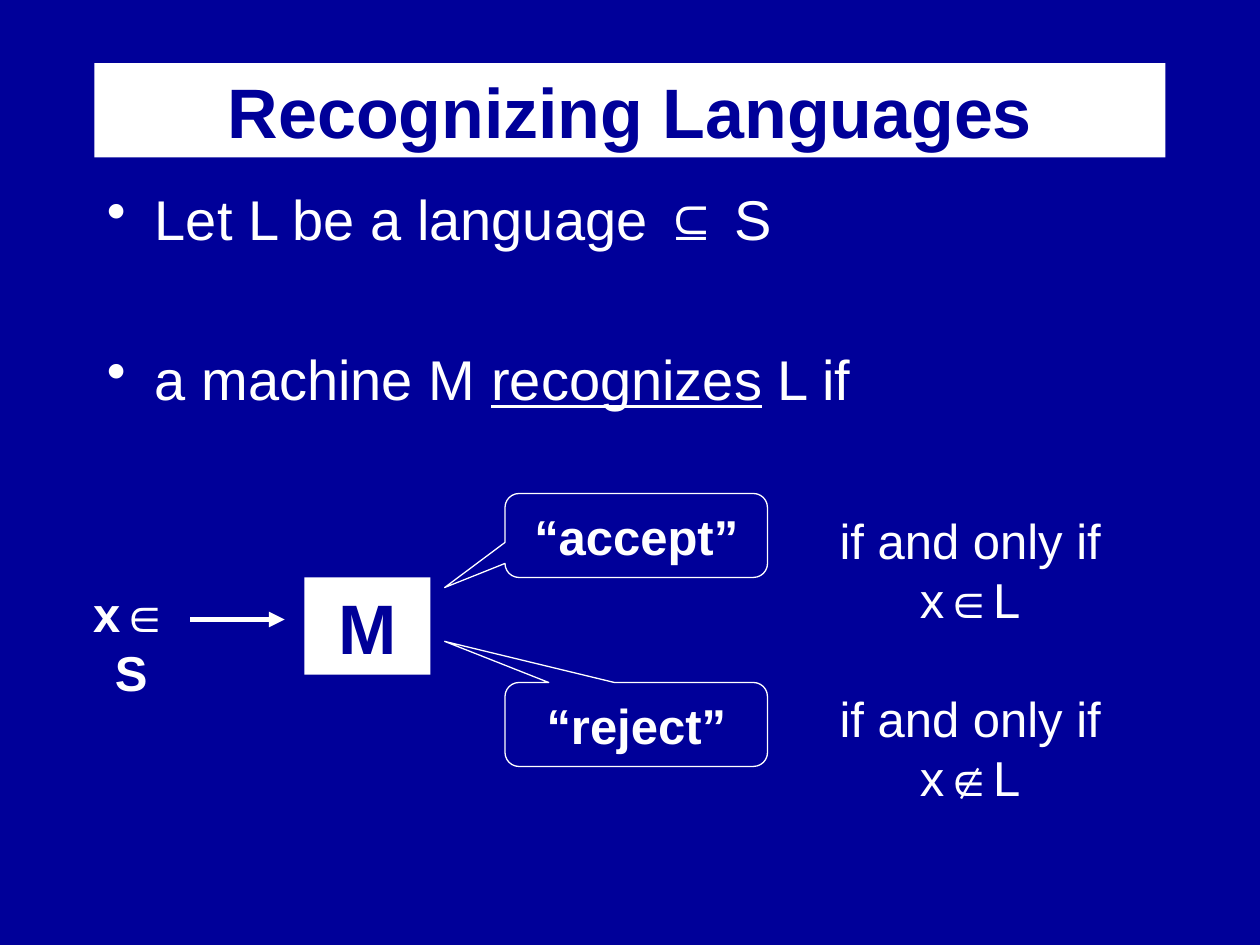
from lxml import etree
from pptx import Presentation, util as u
from pptx.dml.color import RGBColor
from pptx.enum import shapes, text
from pptx.oxml.ns import qn

NAVY = RGBColor(0x00, 0x00, 0x99)
WHITE = RGBColor(0xFF, 0xFF, 0xFF)
COLUMNS, ROWS = 120, 90


class Board:
    """Draws navy and white elements on a slide with a 120 by 90 grid."""

    font = "Arial"

    def __init__(self, presentation):
        self.cell_width = presentation.slide_width / COLUMNS
        self.cell_height = presentation.slide_height / ROWS
        self.slide = presentation.slides.add_slide(presentation.slide_layouts[6])
        self.slide.background.fill.solid()
        self.slide.background.fill.fore_color.rgb = NAVY

    def place(self, *grid):
        return [round(value * (self.cell_height if index % 2 else self.cell_width))
                for index, value in enumerate(grid)]

    def style(self, paragraph, size, color=WHITE, bold=False, align=text.PP_ALIGN.CENTER):
        paragraph.alignment = align
        font = paragraph.font
        font.name, font.size, font.bold = self.font, u.Pt(size), bold
        font.color.rgb = color

    def set_words(self, shape, words, size, color=WHITE, bold=False):
        frame = shape.text_frame
        frame.word_wrap = True
        frame.text = words
        self.style(frame.paragraphs[0], size, color, bold)

    def label(self, grid, words, bold=False):
        self.set_words(self.slide.shapes.add_textbox(*self.place(*grid)), words, 28, bold=bold)

    def panel(self, grid, words):
        shape = self.slide.shapes.add_shape(shapes.MSO_SHAPE.RECTANGLE, *self.place(*grid))
        shape.shadow.inherit = False
        shape.fill.solid()
        shape.fill.fore_color.rgb = WHITE
        shape.line.fill.background()
        shape.text_frame.vertical_anchor = text.MSO_ANCHOR.MIDDLE
        self.set_words(shape, words, 40, NAVY, True)

    def callout(self, grid, words, tip):
        shape = self.slide.shapes.add_shape(
            shapes.MSO_SHAPE.ROUNDED_RECTANGULAR_CALLOUT, *self.place(*grid))
        shape.shadow.inherit = False
        shape.fill.background()
        shape.line.color.rgb = WHITE
        shape.line.width = u.Pt(0.75)
        shape.adjustments[0], shape.adjustments[1] = tip
        shape.text_frame.vertical_anchor = text.MSO_ANCHOR.MIDDLE
        self.set_words(shape, words, 28, bold=True)

    def bullets(self, grid, items, gap):
        frame = self.slide.shapes.add_textbox(*self.place(*grid)).text_frame
        frame.word_wrap = True
        for index, runs in enumerate(items):
            paragraph = frame.add_paragraph() if index else frame.paragraphs[0]
            self.style(paragraph, 32, align=text.PP_ALIGN.LEFT)
            paragraph.space_before = u.Pt(gap if index else 0)
            for words, underlined in runs:
                run = paragraph.add_run()
                run.text = words
                run.font.underline = underlined
            properties = paragraph._p.get_or_add_pPr()
            indent = u.Inches(0.38)
            properties.set("marL", str(indent))
            properties.set("indent", str(-indent))
            bullet = etree.Element(qn("a:buChar"), char="•")
            properties.find(qn("a:defRPr")).addprevious(bullet)

    def arrow(self, grid):
        connector = self.slide.shapes.add_connector(
            shapes.MSO_CONNECTOR.STRAIGHT, *self.place(*grid))
        connector.line.color.rgb = WHITE
        connector.line.width = u.Pt(3)
        etree.SubElement(connector.line._get_or_add_ln(), qn("a:tailEnd"), type="triangle")
        etree.SubElement(connector._element.spPr, qn("a:effectLst"))


def main():
    presentation = Presentation()
    presentation.slide_width, presentation.slide_height = u.Inches(10), u.Inches(7.5)
    board = Board(presentation)
    board.panel((9, 6, 102, 9), "Recognizing Languages")
    board.bullets((9, 17, 102, 69), [
        [("Let L be a language ⊆ S", False)],
        [("a machine M ", False), ("recognizes", True), (" L if", False)],
    ], gap=53)
    board.panel((29, 55, 12, 9.25), "M")
    board.label((6.8, 55, 11.4, 6.8), "x∈\vS", bold=True)
    board.arrow((18.1, 59, 27.1, 59))
    answers = [
        (47, "“accept”", (-0.73, 0.62), 48, "∈"),
        (65, "“reject”", (-0.73, -0.99), 65, "∉"),
    ]
    for row, answer, tip, label_row, relation in answers:
        board.callout((48.1, row, 25, 8), answer, tip)
        board.label((73.9, label_row, 37, 6.8), f"if and only if\vx{relation}L")
    presentation.save("out.pptx")


if __name__ == "__main__":
    main()
